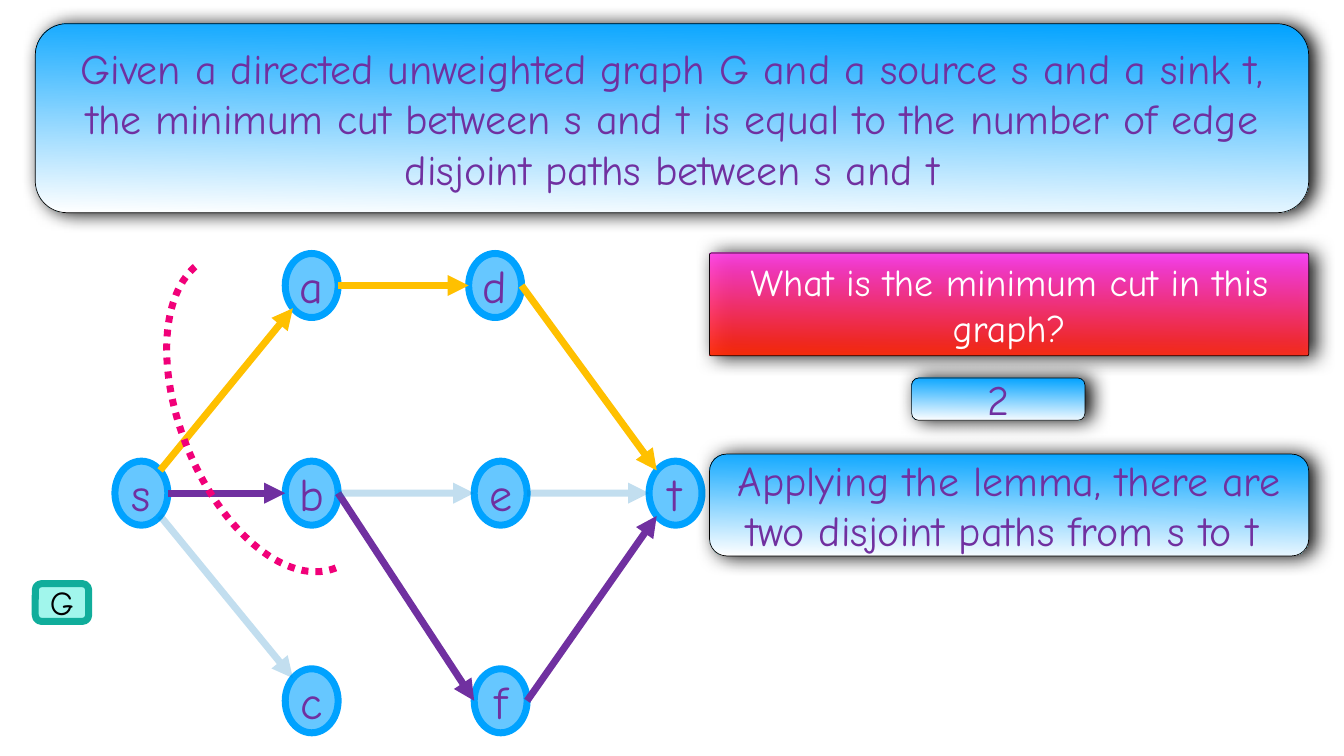
from lxml import etree
from pptx import Presentation
from pptx import util as u
from pptx.dml.color import RGBColor
from pptx.enum import dml, shapes, text
from pptx.oxml.ns import qn

FONT = "Comic Neue"
PURPLE, YELLOW, BLUE, SKY = "7030A0", "FFC000", "0079BF", "00A2FF"
WHITE, BLACK, PINK = "FFFFFF", "000000", "F10079"
NODE_WIDTH, NODE_HEIGHT = 1.05, 1.27
ROWS = (5.03, 9.15, 13.27)

NODES = {
    "a": (5.66, ROWS[0]), "d": (9.3, ROWS[0]),
    "s": (2.28, ROWS[1]), "b": (5.66, ROWS[1]),
    "e": (9.41, ROWS[1]), "t": (12.88, ROWS[1]),
    "c": (5.66, ROWS[2]), "f": (9.41, ROWS[2]),
}
SIDES = {"left": (-1, 0), "right": (1, 0),
         "upper left": (-0.71, -0.71), "lower left": (-0.71, 0.71),
         "upper right": (0.71, -0.71), "lower right": (0.71, 0.71)}
EDGES = [
    ("s", "upper right", "a", "lower left", YELLOW, 100),
    ("a", "right", "d", "left", YELLOW, 100),
    ("d", "right", "t", "upper left", YELLOW, 100),
    ("s", "right", "b", "left", PURPLE, 100),
    ("b", "right", "f", "left", PURPLE, 100),
    ("f", "right", "t", "lower left", PURPLE, 100),
    ("s", "lower right", "c", "upper left", BLUE, 23),
    ("b", "right", "e", "left", BLUE, 23),
    ("e", "right", "t", "left", BLUE, 23),
]
LEMMA_STYLE = (60, PURPLE, SKY, WHITE, 100)
QUESTION_STYLE = (54, WHITE, "FF40FF", "FF2600", 93)
PANELS = [
    ("Given a directed unweighted graph G and a source s and a sink t, "
     "the minimum cut between s and t is equal to the number of edge "
     "disjoint paths between s and t", (0.7, 0.47, 25.27, 3.75), 0.167, LEMMA_STYLE),
    ("What is the minimum cut in this graph?",
     (14.08, 5.02, 11.89, 2.04), 0.017, QUESTION_STYLE),
    ("2", (18.09, 7.5, 3.44, 0.84), 0.167, LEMMA_STYLE),
    ("Applying the lemma, there are two disjoint paths from s to t ",
     (14.08, 9.01, 11.89, 2.02), 0.167, LEMMA_STYLE),
]


def paint(color_format, color):
    color_format.rgb = RGBColor.from_string(color)


def set_line(line, color, width):
    line.fill.solid()
    paint(line.color, color)
    line.width = u.Pt(width)


def set_opacity(element, percent):
    for color in element.iter(qn("a:srgbClr")):
        etree.SubElement(color, qn("a:alpha"), val=str(percent * 1000))


def add_shape(slide, kind, box, line_color, line_width):
    shape = slide.shapes.add_shape(kind, *map(u.Inches, box))
    shape.shadow.inherit = False
    set_line(shape.line, line_color, line_width)
    return shape


def write(shape, words, size, color):
    frame = shape.text_frame
    frame.word_wrap = True
    frame.vertical_anchor = text.MSO_ANCHOR.MIDDLE
    frame.margin_left = frame.margin_right = u.Inches(0.06)
    frame.margin_top = frame.margin_bottom = u.Inches(0.06)
    paragraph = frame.paragraphs[0]
    paragraph.text = words
    paragraph.alignment = text.PP_ALIGN.CENTER
    paragraph.font.name = FONT
    paragraph.font.size = u.Pt(size)
    paint(paragraph.font.color, color)


def add_label(slide, kind, box, words, size, color, fill, line_color):
    shape = add_shape(slide, kind, box, line_color, 10)
    shape.fill.solid()
    paint(shape.fill.fore_color, fill)
    write(shape, words, size, color)


def add_panel(slide, words, box, corner, style):
    size, color, top_color, bottom_color, opacity = style
    shape = add_shape(slide, shapes.MSO_SHAPE.ROUNDED_RECTANGLE, box, BLACK, 1)
    shape.adjustments[0] = corner
    shape.fill.gradient()
    shape.fill.gradient_angle = 269
    for stop, stop_color, position in zip(
            shape.fill.gradient_stops, (top_color, bottom_color), (0, 1)):
        paint(stop.color, stop_color)
        stop.position = position
    properties = shape.element.spPr
    if opacity < 100:
        set_opacity(properties, opacity)
    shadow = etree.SubElement(
        properties.find(qn("a:effectLst")), qn("a:outerShdw"),
        blurRad=str(u.Pt(28)), dist=str(u.Pt(9)), dir="0", rotWithShape="0")
    etree.SubElement(shadow, qn("a:srgbClr"), val=BLACK)
    set_opacity(shadow, 97)
    write(shape, words, size, color)


def node_point(name, side):
    left, top = NODES[name]
    across, down = SIDES[side]
    return (u.Inches(left + NODE_WIDTH * (1 + across) / 2),
            u.Inches(top + NODE_HEIGHT * (1 + down) / 2))


def add_edge(slide, source, source_side, target, target_side, color, opacity):
    connector = slide.shapes.add_connector(
        shapes.MSO_CONNECTOR.STRAIGHT,
        *node_point(source, source_side), *node_point(target, target_side))
    set_line(connector.line, color, 10)
    properties = connector.element.spPr
    if opacity < 100:
        set_opacity(properties, opacity)
    etree.SubElement(properties.find(qn("a:ln")), qn("a:tailEnd"), type="triangle")
    etree.SubElement(properties, qn("a:effectLst"))


def add_cut(slide):
    arc = add_shape(slide, shapes.MSO_SHAPE.ARC, (3.58, 4.86, 3.68, 6.65), PINK, 10)
    arc.fill.background()
    arc.rotation = 158
    arc.adjustments[0] = 162
    arc.adjustments[1] = 51.2
    arc.line.dash_style = dml.MSO_LINE.ROUND_DOT


def main():
    presentation = Presentation()
    presentation.slide_width = u.Inches(26.67)
    presentation.slide_height = u.Inches(15)
    slide = presentation.slides.add_slide(presentation.slide_layouts[6])
    for name, position in NODES.items():
        add_label(slide, shapes.MSO_SHAPE.OVAL, (*position, NODE_WIDTH, NODE_HEIGHT),
                  name, 66, PURPLE, "66C7FF", SKY)
    for edge in EDGES:
        add_edge(slide, *edge)
    add_label(slide, shapes.MSO_SHAPE.ROUNDED_RECTANGLE, (0.7, 11.58, 1.06, 0.75),
              "G", 48, BLACK, "A1F6EC", "10AD9B")
    for panel in PANELS:
        add_panel(slide, *panel)
    add_cut(slide)
    presentation.save("out.pptx")


if __name__ == "__main__":
    main()
